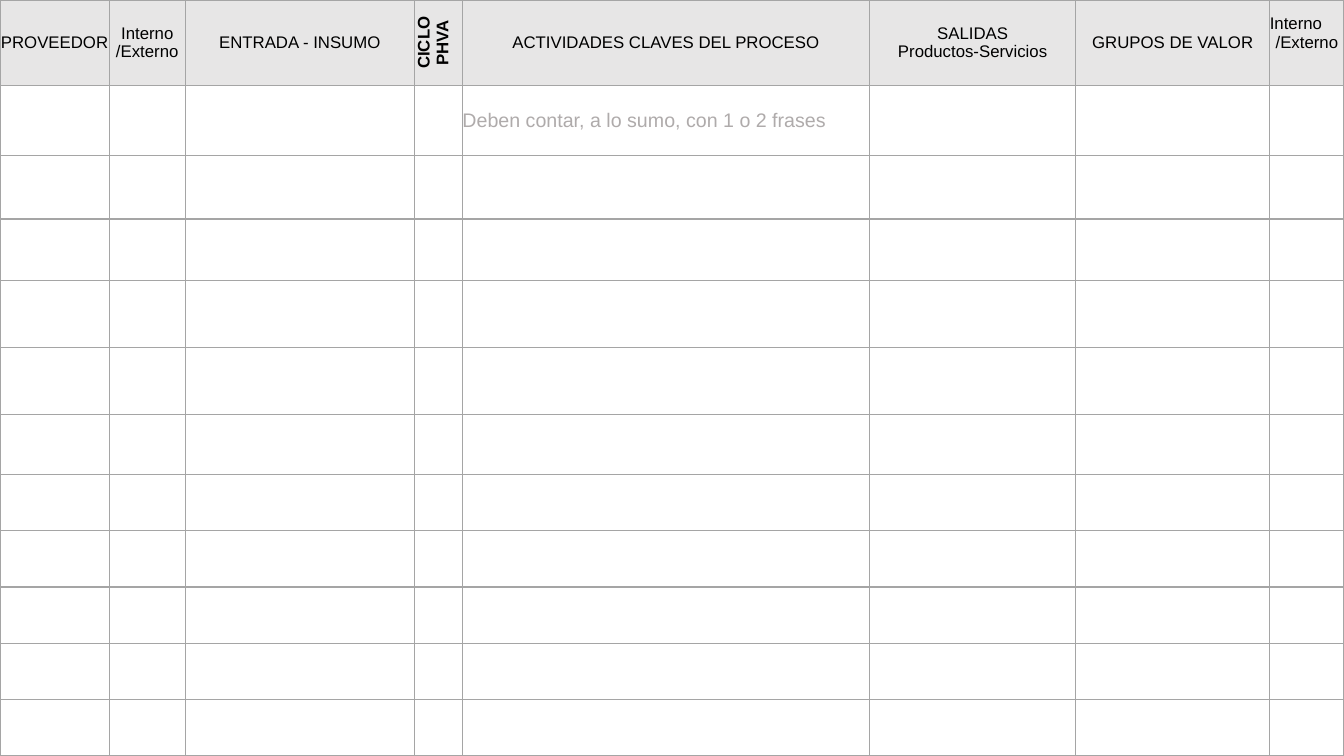
from dataclasses import dataclass

from lxml import etree
from pptx import Presentation
from pptx import util as u
from pptx.dml.color import RGBColor
from pptx.enum import text
from pptx.oxml.ns import qn
from pptx.table import _Cell

FONT = "Arial"
GREY_LINE = "A5A5A5"
HEADER_FILL = "E7E6E6"
ROW_HEIGHTS = [2.15, 1.77, 1.6, 1.55, 1.69, 1.69, 1.5] + [1.42] * 5
CENTER = text.PP_ALIGN.CENTER
LEFT = text.PP_ALIGN.LEFT


@dataclass
class Column:
    width: float
    lines: tuple[str, ...]
    bold: bool = False
    vertical: bool = False
    first_align: text.PP_ALIGN = CENTER
    bottom: float = 0


COLUMNS = [
    Column(2.75, ("PROVEEDOR",)),
    Column(1.92, ("Interno /Externo",)),
    Column(5.77, ("ENTRADA - INSUMO",)),
    Column(1.21, ("CICLO", "PHVA"), bold=True, vertical=True),
    Column(10.26, ("ACTIVIDADES CLAVES DEL PROCESO",)),
    Column(5.19, ("SALIDAS", "Productos-Servicios")),
    Column(4.89, ("GRUPOS DE VALOR",)),
    Column(1.87, ("Interno", "/Externo"), first_align=LEFT, bottom=0.48),
]


def color(value: str) -> RGBColor:
    return RGBColor.from_string(value)


def write(cell: _Cell, lines: tuple[str, ...], *, size: float = 12, ink: str = "000000",
          bold: bool = False, first_align: text.PP_ALIGN = CENTER, bottom: float = 0) -> None:
    cell.margin_left = cell.margin_right = cell.margin_top = 0
    cell.margin_bottom = u.Cm(bottom)
    cell.vertical_anchor = text.MSO_ANCHOR.MIDDLE
    for index, line in enumerate(lines):
        para = cell.text_frame.add_paragraph() if index else cell.text_frame.paragraphs[0]
        para.alignment = CENTER if index else first_align
        span = para.add_run()
        span.text = line
        span.font.name = FONT
        span.font.size = u.Pt(size)
        span.font.bold = bold
        span.font.color.rgb = color(ink)


def add_borders(cell: _Cell) -> None:
    properties = cell._tc.get_or_add_tcPr()
    for position, side in enumerate(("lnL", "lnR", "lnT", "lnB")):
        line = etree.Element(qn(f"a:{side}"), w=str(u.Pt(1)))
        fill = etree.SubElement(line, qn("a:solidFill"))
        etree.SubElement(fill, qn("a:srgbClr"), val=GREY_LINE)
        properties.insert(position, line)


def main() -> None:
    deck = Presentation()
    deck.slide_width, deck.slide_height = u.Inches(13.33), u.Inches(7.5)
    page = deck.slides.add_slide(deck.slide_layouts[6])
    table = page.shapes.add_table(len(ROW_HEIGHTS), len(COLUMNS), 0, 0,
                                  deck.slide_width, deck.slide_height).table
    table.first_row = table.horz_banding = False
    for row, height in zip(table.rows, ROW_HEIGHTS):
        row.height = u.Cm(height)
    for cell in table.iter_cells():
        cell.fill.background()
        add_borders(cell)

    for index, column in enumerate(COLUMNS):
        table.columns[index].width = u.Cm(column.width)
        header = table.cell(0, index)
        header.fill.solid()
        header.fill.fore_color.rgb = color(HEADER_FILL)
        write(header, column.lines, bold=column.bold,
              first_align=column.first_align, bottom=column.bottom)
        if column.vertical:
            header._tc.get_or_add_tcPr().set("vert", "vert270")

    write(table.cell(1, 4), ("Deben contar, a lo sumo, con 1 o 2 frases",),
          size=14, ink="AFABAB", first_align=text.PP_ALIGN.JUSTIFY)
    deck.save("out.pptx")


if __name__ == "__main__":
    main()
